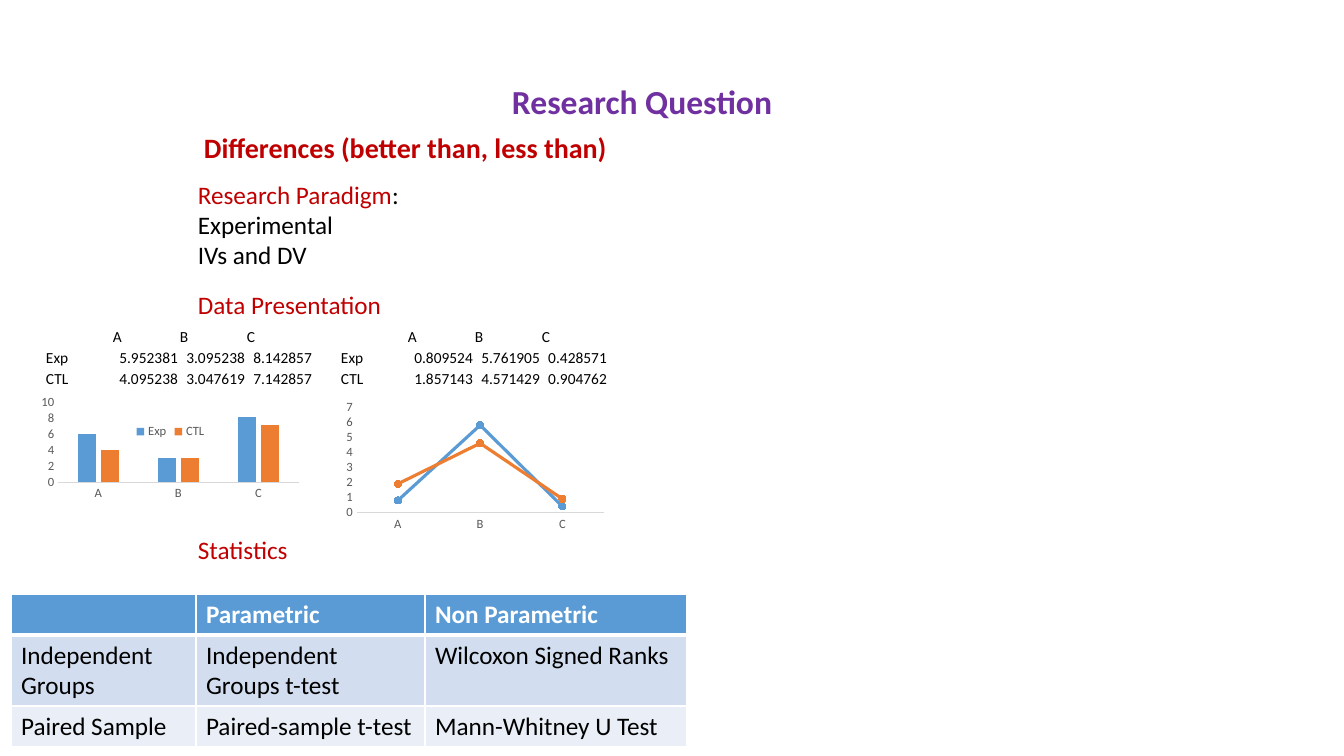
from lxml import etree
from pptx import Presentation
from pptx.chart.data import CategoryChartData
from pptx.dml.color import RGBColor
from pptx.enum.chart import XL_CHART_TYPE, XL_LEGEND_POSITION, XL_MARKER_STYLE, XL_TICK_MARK
from pptx.enum.text import MSO_ANCHOR, MSO_AUTO_SIZE, PP_ALIGN
from pptx.oxml.ns import qn
from pptx.util import Pt

COLUMN, LINE = XL_CHART_TYPE.COLUMN_CLUSTERED, XL_CHART_TYPE.LINE_MARKERS
LEGEND_BOTTOM = XL_LEGEND_POSITION.BOTTOM
CIRCLE = XL_MARKER_STYLE.CIRCLE
NO_TICK = XL_TICK_MARK.NONE
BOTTOM = MSO_ANCHOR.BOTTOM
FIT_SHAPE = MSO_AUTO_SIZE.SHAPE_TO_FIT_TEXT
LEFT, RIGHT = PP_ALIGN.LEFT, PP_ALIGN.RIGHT

FONT = "Calibri"
BLACK = RGBColor(0x00, 0x00, 0x00)
WHITE = RGBColor(0xFF, 0xFF, 0xFF)
PURPLE = RGBColor(0x70, 0x30, 0xA0)
RED = RGBColor(0xC0, 0x00, 0x00)
BLUE = RGBColor(0x5B, 0x9B, 0xD5)
ORANGE = RGBColor(0xED, 0x7D, 0x31)
GREY = RGBColor(0x59, 0x59, 0x59)
AXIS_GREY = RGBColor(0xD9, 0xD9, 0xD9)
BAND_DARK = RGBColor(0xD2, 0xDE, 0xEF)
BAND_LIGHT = RGBColor(0xEA, 0xEF, 0xF7)

GROUPS = ("A", "B", "C")
SERIES_COLORS = {"Exp": BLUE, "CTL": ORANGE}


def px(n):
    return round(n * 914400 / 100.8)


def set_font(font, size, color, bold=False):
    font.name, font.size, font.bold = FONT, Pt(size), bold
    font.color.rgb = color


def add_text(slide, box, lines, size, color, bold=False):
    """Each line is a string, or a list of (text, colour) runs."""
    sp = slide.shapes.add_textbox(*map(px, box))
    tf = sp.text_frame
    tf.word_wrap = False
    tf.auto_size = FIT_SHAPE
    for i, line in enumerate(lines):
        p = tf.add_paragraph() if i else tf.paragraphs[0]
        set_font(p.font, size, color, bold)
        if isinstance(line, str):
            p.text = line
            continue
        for text, run_color in line:
            r = p.add_run()
            r.text = text
            set_font(r.font, size, run_color, bold)


def add_grid(slide, left, top, widths, heights):
    shape = slide.shapes.add_table(len(heights), len(widths), px(left), px(top),
                                   px(sum(widths)), px(sum(heights)))
    table = shape.table
    table.first_row = table.horz_banding = False
    for column, width in zip(table.columns, widths):
        column.width = px(width)
    for row, height in zip(table.rows, heights):
        row.height = px(height)
    return table


def fill_cell(cell, text, size, color, bold=False):
    p = cell.text_frame.paragraphs[0]
    set_font(p.font, size, color, bold)
    if text:
        p.text = text
    else:
        p._p.get_or_add_endParaRPr().set("sz", str(size * 100))
    return p


def set_borders(cell, bottom):
    tcPr = cell._tc.get_or_add_tcPr()
    for side, width in (("L", 1), ("R", 1), ("T", 1), ("B", bottom)):
        ln = etree.SubElement(tcPr, qn("a:ln" + side), w=str(Pt(width)))
        fill = etree.SubElement(ln, qn("a:solidFill"))
        etree.SubElement(fill, qn("a:srgbClr"), val=str(WHITE))


def add_data_table(slide, left, data):
    table = add_grid(slide, left, 326, [67] * 4, [21] * 3)
    rows = [("", *GROUPS)] + [(name, *(f"{v:.6f}" for v in values)) for name, values in data.items()]
    for i, row in enumerate(rows):
        for j, text in enumerate(row):
            cell = table.cell(i, j)
            cell.margin_left = cell.margin_right = cell.margin_top = px(1)
            cell.margin_bottom = 0
            cell.vertical_anchor = BOTTOM
            cell.fill.background()
            p = fill_cell(cell, text, 11, BLACK)
            p.alignment = RIGHT if i and j else LEFT


def add_statistics_table(slide, rows):
    table = add_grid(slide, 11, 594, [185, 229, 262], [41, 71, 41])
    for i, (row, fill) in enumerate(zip(rows, (BLUE, BAND_DARK, BAND_LIGHT))):
        header = i == 0
        for j, text in enumerate(row):
            cell = table.cell(i, j)
            set_borders(cell, 3 if header else 1)
            cell.fill.solid()
            cell.fill.fore_color.rgb = fill
            fill_cell(cell, text, 18, WHITE if header else BLACK, header)


def add_group_chart(slide, kind, box, data, top_value, unit):
    chart_data = CategoryChartData()
    chart_data.categories = GROUPS
    for name, values in data.items():
        chart_data.add_series(name, [round(v, 1) for v in values])
    chart = slide.shapes.add_chart(kind, *map(px, box), chart_data).chart
    chart.has_title = chart.has_legend = False
    set_font(chart.font, 10, BLACK)

    # Axes
    for axis in (chart.category_axis, chart.value_axis):
        axis.has_major_gridlines = False
        axis.major_tick_mark = axis.minor_tick_mark = NO_TICK
        set_font(axis.tick_labels.font, 9, GREY)
    line = chart.category_axis.format.line
    line.color.rgb = AXIS_GREY
    line.width = Pt(0.75)
    value_axis = chart.value_axis
    value_axis.format.line.fill.background()
    value_axis.minimum_scale, value_axis.maximum_scale = 0, top_value
    value_axis.major_unit = unit

    # Series
    plot = chart.plots[0]
    plot.vary_by_categories = False
    for series in plot.series:
        color = SERIES_COLORS[series.name]
        if kind == COLUMN:
            series.format.fill.solid()
            series.format.fill.fore_color.rgb = color
            continue
        series.smooth = False
        series.format.line.color.rgb = color
        series.format.line.width = Pt(2.25)
        marker = series.marker
        marker.style, marker.size = CIRCLE, 5
        marker.format.fill.solid()
        marker.format.fill.fore_color.rgb = color
        marker.format.line.color.rgb = color
    return chart


def add_legend(chart, x, y):
    """Place the legend at a fraction of the chart's width and height."""
    chart.has_legend = True
    legend = chart.legend
    legend.position = LEGEND_BOTTOM
    legend.include_in_layout = False
    set_font(legend.font, 9, GREY)
    layout = legend._element.get_or_add_layout()
    manual = etree.SubElement(layout, qn("c:manualLayout"))
    for tag, val in (("xMode", "edge"), ("yMode", "edge"), ("x", x), ("y", y)):
        etree.SubElement(manual, qn("c:" + tag), val=str(val))


def main():
    prs = Presentation()
    prs.slide_width, prs.slide_height = px(1344), px(756)
    slide = prs.slides.add_slide(prs.slide_layouts[6])

    # Headings
    add_text(slide, (502, 76, 283, 50), ["Research Question"], 24, PURPLE, True)
    add_text(slide, (194, 126, 429, 44), ["Differences (better than, less than)"], 20, RED, True)
    add_text(slide, (188, 284, 206, 40), ["Data Presentation"], 18, RED)
    add_text(slide, (188, 529, 111, 40), ["Statistics"], 18, RED)
    add_text(slide, (188, 174, 224, 102),
             [[("Research Paradigm", RED), (":", BLACK)], "Experimental", "IVs and DV"], 18, BLACK)

    # Data tables and their charts
    bar_data = {"Exp": (5.952381, 3.095238, 8.142857), "CTL": (4.095238, 3.047619, 7.142857)}
    line_data = {"Exp": (0.809524, 5.761905, 0.428571), "CTL": (1.857143, 4.571429, 0.904762)}
    bars = add_group_chart(slide, COLUMN, (36, 392, 268, 142), bar_data, 10, 2)
    bars.plots[0].gap_width, bars.plots[0].overlap = 219, -27
    add_legend(bars, 0.36, 0.2)
    add_group_chart(slide, LINE, (341, 397, 268, 137), line_data, 7, 1)
    add_data_table(slide, 45, bar_data)
    add_data_table(slide, 340, line_data)

    # Statistics
    add_statistics_table(slide, [
        ("", "Parametric", "Non Parametric"),
        ("Independent Groups", "Independent Groups t-test", "Wilcoxon Signed Ranks"),
        ("Paired Sample", "Paired-sample t-test", "Mann-Whitney U Test"),
    ])
    prs.save("out.pptx")


if __name__ == "__main__":
    main()
